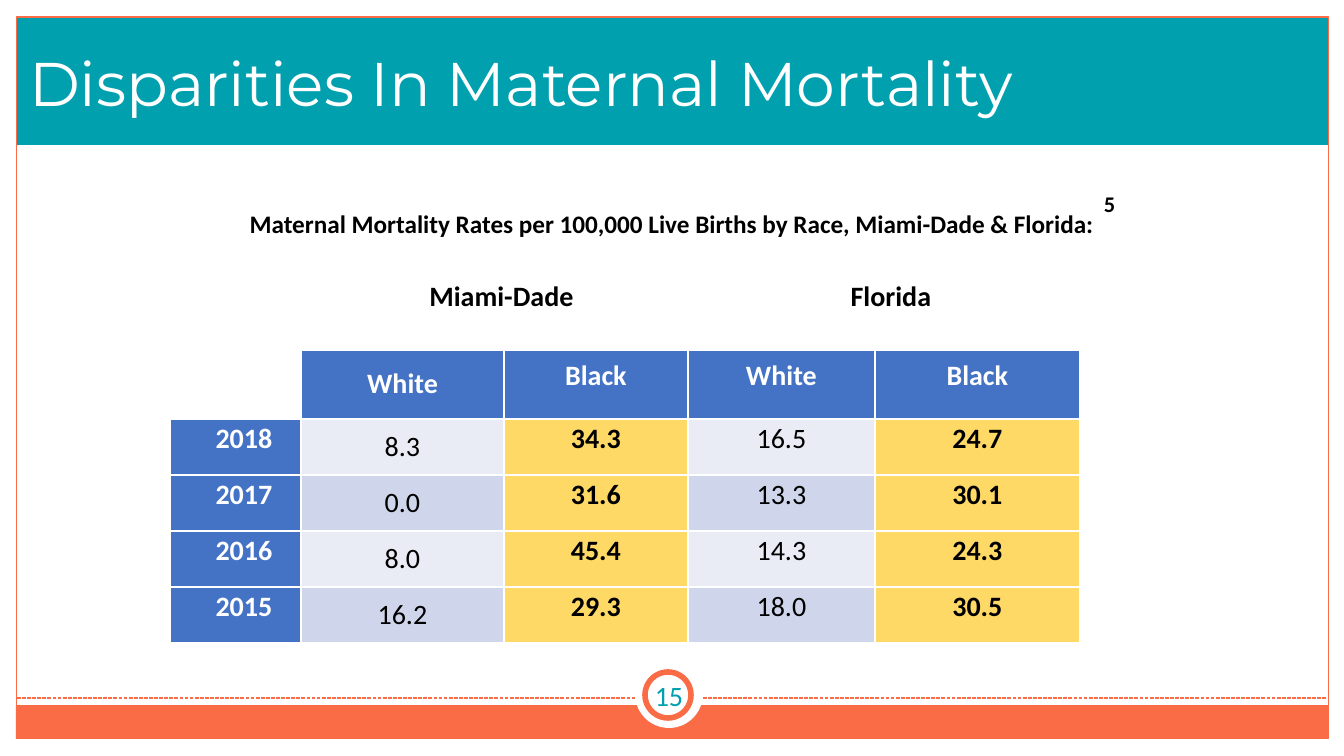
from lxml.etree import SubElement
from pptx import Presentation
from pptx.dml.color import RGBColor
from pptx.enum.dml import MSO_LINE
from pptx.enum.shapes import MSO_CONNECTOR, MSO_SHAPE
from pptx.enum.text import MSO_ANCHOR, MSO_AUTO_SIZE, PP_ALIGN
from pptx.oxml import parse_xml
from pptx.oxml.ns import nsdecls, qn
from pptx.util import Emu, Pt

PX = 914400 / 100.8  # EMU in one px

THEME = {
    "teal": RGBColor.from_string("00A0AF"),
    "orange": RGBColor.from_string("F96C45"),
    "blue": RGBColor.from_string("4472C4"),
    "gold": RGBColor.from_string("FFD966"),
    "bands": [RGBColor.from_string(c) for c in ("E9EBF5", "CFD5EA")],
    "white": RGBColor.from_string("FFFFFF"),
    "black": RGBColor.from_string("000000"),
    "heading_font": "Montserrat",
    "body_font": "Calibri",
    "title_size": Pt(44),
    "table_size": Pt(20),
    "caption_size": Pt(18),
    "reference_size": Pt(16),
    "tight_line": Pt(13.5),
}


def px(*lengths):
    return [Emu(round(n * PX)) for n in lengths]


def write(frame, text, size, color, bold=False, font=THEME["body_font"],
          align=PP_ALIGN.CENTER, spacing=None):
    paragraph = frame.paragraphs[0]
    paragraph.alignment = align
    if spacing:
        paragraph.line_spacing = spacing
    run = paragraph.add_run()
    run.text = text
    run.font.size, run.font.name, run.font.bold = size, font, bold
    run.font.color.rgb = color


deck = Presentation()
deck.slide_width, deck.slide_height = px(1344, 756)
slide = deck.slides.add_slide(deck.slide_layouts[5])
shapes = slide.shapes

# Bands, frame and page number ring: kind, box, fill, line, line width
backdrop = [
    (MSO_SHAPE.RECTANGLE, (17, 18, 1312, 127), "teal", None, 0),
    (MSO_SHAPE.RECTANGLE, (16, 705, 1312, 34), "orange", None, 0),
    (MSO_SHAPE.RECTANGLE, (17, 17, 1312, 722), None, "orange", 0.75),
    (MSO_SHAPE.OVAL, (635, 660, 68, 68), "white", None, 0),
    (MSO_SHAPE.OVAL, (645, 672, 46, 46), "white", "orange", 4),
]
for kind, box, fill, line, width in backdrop:
    if kind == MSO_SHAPE.OVAL and line is None:
        # Dashed footer rule, passing behind the ring
        rule = shapes.add_connector(MSO_CONNECTOR.STRAIGHT, *px(17, 698, 1329, 698))
        rule.line.color.rgb = THEME["orange"]
        rule.line.width = Pt(0.9)
        rule.line.dash_style = MSO_LINE.SQUARE_DOT
        SubElement(rule.element.spPr, qn("a:effectLst"))
    part = shapes.add_shape(kind, *px(*box))
    part.shadow.inherit = False
    if fill:
        part.fill.solid()
        part.fill.fore_color.rgb = THEME[fill]
    else:
        part.fill.background()
    if line:
        part.line.color.rgb = THEME[line]
        part.line.width = Pt(width)
    else:
        part.line.fill.background()

# Title, brought in front of its band
title = shapes.title
shapes.element.append(title.element)
title.left, title.top, title.width, title.height = px(19, 48, 1119, 79)
title.text_frame.auto_size = MSO_AUTO_SIZE.NONE
title.text_frame.vertical_anchor = MSO_ANCHOR.TOP
write(title.text_frame, "Disparities In Maternal Mortality", THEME["title_size"],
      THEME["white"], font=THEME["heading_font"], align=PP_ALIGN.LEFT, spacing=0.9)

# Mortality rates
groups = {1: "Miami-Dade", 3: "Florida"}
rates = [
    ("", "White", "Black", "White", "Black"),
    ("2018", "8.3", "34.3", "16.5", "24.7"),
    ("2017", "0.0", "31.6", "13.3", "30.1"),
    ("2016", "8.0", "45.4", "14.3", "24.3"),
    ("2015", "16.2", "29.3", "18.0", "30.5"),
]
column_widths = px(131, 203, 184, 187, 205)
row_heights = px(88, 70, 56, 56, 56, 56)
table = shapes.add_table(len(row_heights), len(column_widths), *px(170, 261),
                         sum(column_widths), sum(row_heights)).table
table.first_row = table.horz_banding = False
for column, width in zip(table.columns, column_widths):
    column.width = width
for row, height in zip(table.rows, row_heights):
    row.height = height
for c in groups:
    table.cell(0, c).merge(table.cell(0, c + 1))

for r in range(len(row_heights)):
    for c in range(len(column_widths)):
        cell = table.cell(r, c)
        text = rates[r - 1][c] if r else groups.get(c, "")
        is_group, is_year, is_header = r == 0, c == 0, r == 1
        is_black = c in (2, 4)

        # White cell borders, heavier under the group names
        for side in ("lnL", "lnR", "lnT", "lnB"):
            weight = Pt(3) if is_group and c and side == "lnB" else Pt(1)
            cell._tc.get_or_add_tcPr().append(parse_xml(
                f'<a:{side} {nsdecls("a")} w="{weight}"><a:solidFill>'
                f'<a:srgbClr val="{THEME["white"]}"/></a:solidFill></a:{side}>'))

        # Fill
        if is_group or not text:
            cell.fill.background()
        else:
            cell.fill.solid()
            if is_year or is_header:
                cell.fill.fore_color.rgb = THEME["blue"]
            else:
                cell.fill.fore_color.rgb = THEME["gold"] if is_black else THEME["bands"][r % 2]

        # Text
        if not text:
            continue
        pad = 21 if is_group else 18 if is_year else 0
        (cell.margin_left, cell.margin_top, cell.margin_right,
         cell.margin_bottom) = px(35 if pad else 0, pad, pad, pad)
        cell.vertical_anchor = MSO_ANCHOR.MIDDLE
        on_blue = not is_group and (is_year or is_header)
        write(cell.text_frame, text, THEME["table_size"],
              THEME["white"] if on_blue else THEME["black"],
              bold=is_group or is_year or is_header or is_black,
              spacing=None if c == 1 and not is_group else THEME["tight_line"])

# Caption, its reference mark and the page number
caption = "Maternal Mortality Rates per 100,000 Live Births by Race, Miami-Dade & Florida:"
labels = [
    (caption, (224, 203, 896, 40), "caption_size", "black", True, MSO_ANCHOR.TOP),
    ("5", (1081, 185, 57, 37), "reference_size", "black", True, MSO_ANCHOR.TOP),
    ("15", (626, 671, 86, 48), "table_size", "teal", False, MSO_ANCHOR.MIDDLE),
]
for text, box, size, color, bold, anchor in labels:
    frame = shapes.add_textbox(*px(*box)).text_frame
    frame.word_wrap = True
    frame.vertical_anchor = anchor
    write(frame, text, THEME[size], THEME[color], bold)

deck.save("out.pptx")
